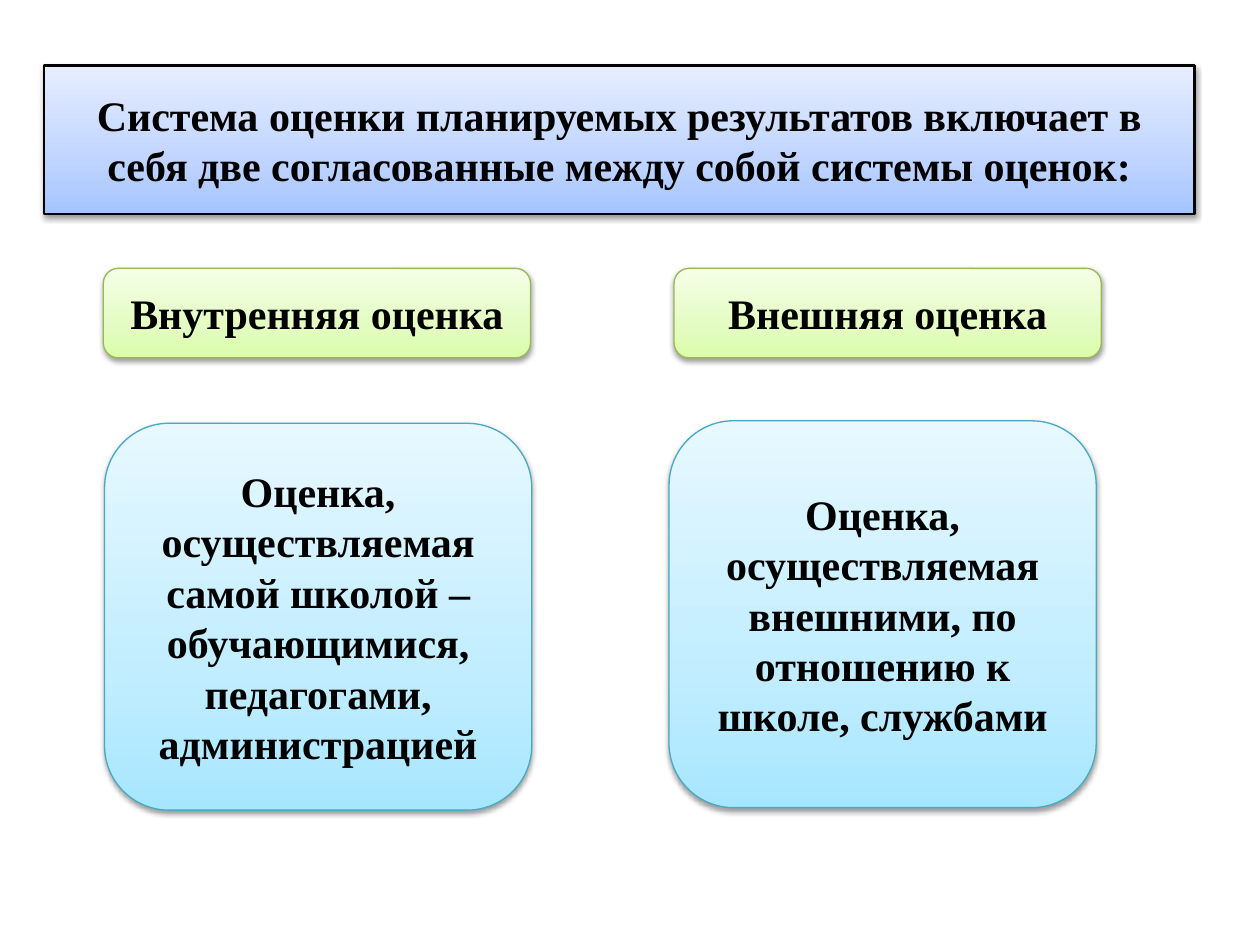
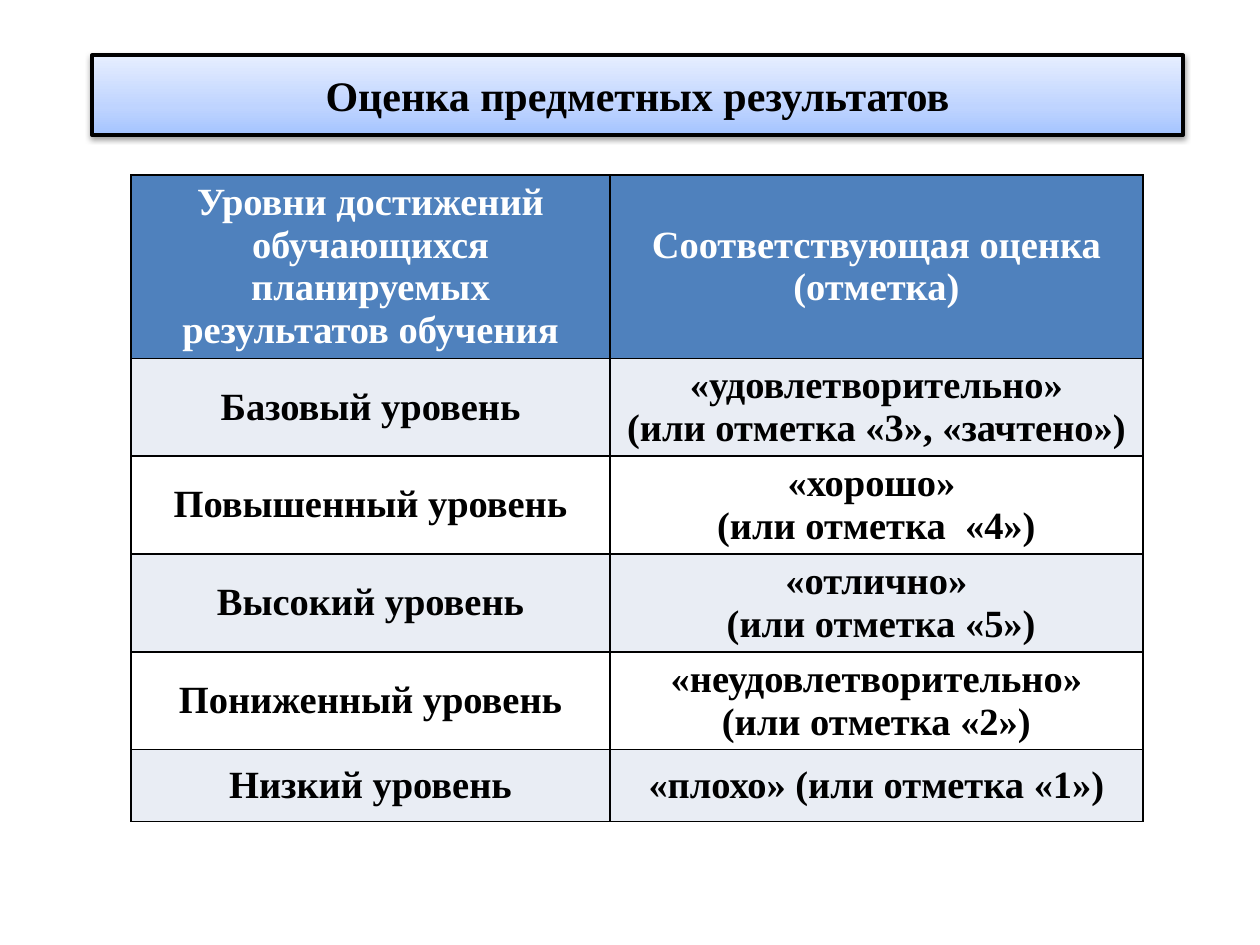
from lxml.etree import SubElement
from pptx import Presentation
from pptx.dml.color import RGBColor
from pptx.enum.shapes import MSO_SHAPE as Preset
from pptx.enum.text import MSO_ANCHOR as Anchor, MSO_AUTO_SIZE as AutoSize, PP_ALIGN as Align
from pptx.oxml.ns import qn
from pptx.util import Inches, Pt

COLUMNS, ROWS = 40, 30
SLIDE_WIDTH, SLIDE_HEIGHT = Inches(10), Inches(7.5)
FONT = "Times New Roman"
BLACK, WHITE = "000000", "FFFFFF"
HEADER_FILL, BAND_FILL = "4F81BD", "E9EDF4"
BLUE = ("A4C4FF", "BFD4FF", "E6EEFF")
GREEN = ("DAFDA7", "E4FCC2", "F5FFE7")
AQUA = ("A7E6FF", "C1EDFF", "E7F8FF")
GREEN_LINE, AQUA_LINE = "98B955", "46AAC5"
STOP_POSITIONS = (0, 35, 100)

ASSESSMENTS = [
    ("Внутренняя оценка", 3.28,
     "Оценка, осуществляемая самой школой – обучающимися, педагогами, администрацией",
     3.32, 13.44),
    ("Внешняя оценка", 21.4,
     "Оценка, осуществляемая внешними, по отношению к школе, службами",
     21.24, 13.36),
]
LEVELS = [
    ("Уровни достижений обучающихся планируемых результатов обучения",
     "Соответствующая оценка (отметка)"),
    ("Базовый уровень", "«удовлетворительно»\n(или отметка «3», «зачтено»)"),
    ("Повышенный уровень", "«хорошо» \n(или отметка  «4»)"),
    ("Высокий уровень", "«отлично»\n (или отметка «5»)"),
    ("Пониженный уровень", "«неудовлетворительно»\n(или отметка «2»)"),
    ("Низкий уровень", "«плохо» (или отметка «1»)"),
]


def across(columns):
    """Turn grid columns into a length."""
    return round(SLIDE_WIDTH * columns / COLUMNS)


def down(rows):
    """Turn grid rows into a length."""
    return round(SLIDE_HEIGHT * rows / ROWS)


def place(left, top, width, height):
    """Turn a grid position into slide lengths."""
    return across(left), down(top), across(width), down(height)


def rgb(value):
    """Turn a hex string into a colour."""
    return RGBColor.from_string(value)


def write(frame, text, size, color=BLACK):
    """Fill a text frame with bold centred text."""
    frame.text = text
    for paragraph in frame.paragraphs:
        paragraph.alignment = Align.CENTER
        for run in paragraph.runs:
            run.font.name = FONT
            run.font.size = Pt(size)
            run.font.bold = True
            run.font.color.rgb = rgb(color)


def add_color(parent, value, tag="a:srgbClr"):
    """Add a colour element below the parent."""
    return SubElement(parent, qn(tag), val=value)


def style_panel(panel, gradient, line_color, line_width):
    """Give a panel its rising gradient, outline and soft shadow."""
    panel.fill.gradient()
    panel.fill.gradient_angle = 90
    properties = panel._element.spPr
    stops = properties.find(qn("a:gradFill")).find(qn("a:gsLst"))
    for stop in list(stops):
        stops.remove(stop)
    for position, color in zip(STOP_POSITIONS, gradient):
        add_color(SubElement(stops, qn("a:gs"), pos=str(position * 1000)), color)
    panel.line.color.rgb = rgb(line_color)
    panel.line.width = Pt(line_width)
    panel.shadow.inherit = False
    shadow = SubElement(properties.find(qn("a:effectLst")), qn("a:outerShdw"),
                        blurRad=str(Pt(3.1)), dist=str(Pt(1.6)), dir="5400000",
                        rotWithShape="0")
    SubElement(add_color(shadow, BLACK), qn("a:alpha"), val="38000")


def add_panel(slide, text, position, gradient, line_color):
    """Add a rounded panel with centred text."""
    panel = slide.shapes.add_shape(Preset.ROUNDED_RECTANGLE, *place(*position))
    style_panel(panel, gradient, line_color, 0.75)
    write(panel.text_frame, text, 24)


def add_titled_slide(deck, text, position, line_width):
    """Add a slide whose title is a rounded blue banner."""
    slide = deck.slides.add_slide(deck.slide_layouts[5])
    title = slide.shapes.title
    title.left, title.top, title.width, title.height = place(*position)
    outline = SubElement(title._element.spPr, qn("a:prstGeom"), prst="roundRect")
    SubElement(outline, qn("a:avLst"))
    style_panel(title, BLUE, BLACK, line_width)
    write(title.text_frame, text, 24)
    title.text_frame.word_wrap = True
    title.text_frame.auto_size = AutoSize.NONE
    title.text_frame.vertical_anchor = Anchor.MIDDLE
    return slide


def style_cell(cell, text, fill, color):
    """Write a cell with a thin black frame and a plain fill."""
    write(cell.text_frame, text, 22, color)
    cell.vertical_anchor = Anchor.MIDDLE
    properties = cell._tc.get_or_add_tcPr()
    for side in ("a:lnL", "a:lnR", "a:lnT", "a:lnB"):
        border = SubElement(properties, qn(side), w=str(Pt(1)))
        add_color(SubElement(border, qn("a:solidFill")), BLACK)
    cell.fill.solid()
    cell.fill.fore_color.rgb = rgb(fill)


def add_levels_table(slide, levels, position, widths, heights):
    """Add the banded table of levels and marks."""
    table = slide.shapes.add_table(len(levels), len(widths), *place(*position)).table
    for column, width in zip(table.columns, widths):
        column.width = across(width)
    for row, height in zip(table.rows, heights):
        row.height = down(height)
    for index, level in enumerate(levels):
        band = BAND_FILL if index % 2 else WHITE
        fill, color = (band, BLACK) if index else (HEADER_FILL, WHITE)
        for cell, text in zip(table.rows[index].cells, level):
            style_cell(cell, text, fill, color)


def main():
    """Build and save both slides."""
    deck = Presentation()
    deck.slide_width, deck.slide_height = SLIDE_WIDTH, SLIDE_HEIGHT

    systems = add_titled_slide(
        deck, "Система оценки планируемых результатов включает в себя "
        "две согласованные между собой системы оценок:",
        (1.4, 2.08, 36.52, 4.72), 1.5)
    for name, name_left, meaning, meaning_left, meaning_top in ASSESSMENTS:
        add_panel(systems, name, (name_left, 8.52, 13.56, 2.84), GREEN, GREEN_LINE)
        add_panel(systems, meaning, (meaning_left, meaning_top, 13.56, 12.28),
                  AQUA, AQUA_LINE)

    results = add_titled_slide(deck, "Оценка предметных результатов",
                               (2.92, 1.76, 34.64, 2.52), 2.25)
    add_levels_table(results, LEVELS, (4.16, 5.56, 32.12, 21.88),
                     (15.2, 16.92), [3.64] + [2.28] * 5)
    deck.save("out.pptx")


if __name__ == "__main__":
    main()
